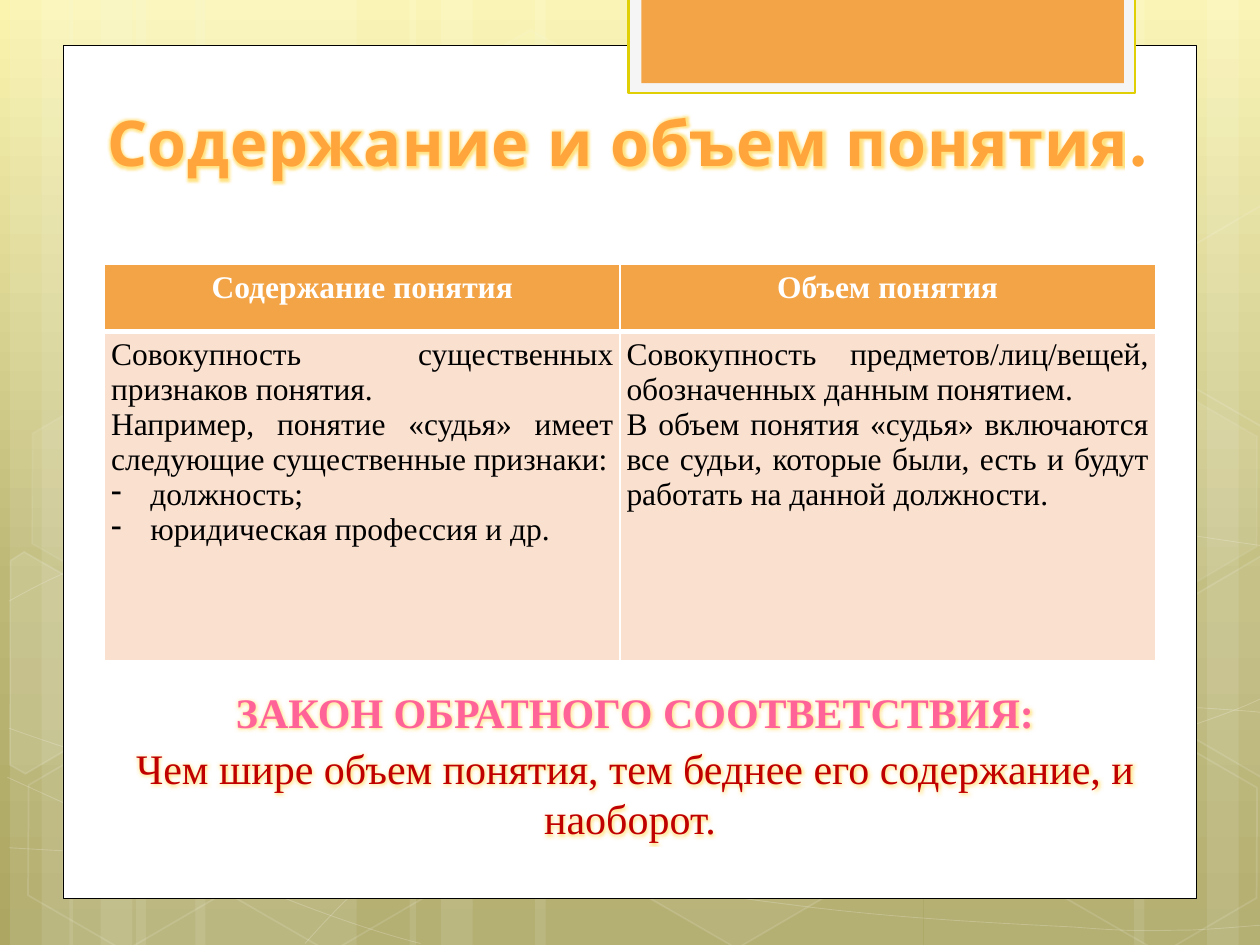
import copy
import math

import pptx
import pptx.dml.color
import pptx.enum.shapes
import pptx.enum.text
import pptx.oxml
import pptx.oxml.ns
import pptx.util

SHAPE = pptx.enum.shapes.MSO_SHAPE
ALIGN = pptx.enum.text.PP_ALIGN
ANCHOR = pptx.enum.text.MSO_ANCHOR
Pt = pptx.util.Pt
qn = pptx.oxml.ns.qn

SERIF = "Times New Roman"
WHITE, ORANGE, PEACH = "FFFFFF", "F3A447", "FAE0CF"
TILT = 30

# Light vertical bars: left, width
BARS = [(1.08, 1.75), (0.08, 0.5), (0.33, 0.83), (1.55, 1.75), (0.55, 0.5), (0.8, 0.83),
        (7.33, 1.75), (9.58, 0.5), (9, 0.83), (4.25, 3.08), (3.25, 0.5), (3.5, 0.83)]

# Thin curves: a start, then three Bezier points for each span
CURVES = [
    [(0.07, 6.73), (0.61, 6.76), (1.15, 6.79), (1.9, 6.78), (2.65, 6.77), (3.58, 6.75), (4.58, 6.65),
     (5.58, 6.55), (7, 6.36), (7.92, 6.17), (8.83, 5.98), (9.77, 5.68), (10.07, 5.51)],
    [(0.07, 4.77), (0.36, 4.61), (0.65, 4.46), (1.21, 4.31), (1.78, 4.16), (2.59, 3.94), (3.47, 3.87),
     (4.36, 3.8), (5.44, 3.79), (6.54, 3.87), (7.64, 3.95), (9.47, 4.26), (10.07, 4.34)],
    [(0.06, 6.17), (1.27, 6.72), (2.47, 7.27), (3.34, 7.49)],
    [(0.07, 5.78), (0.38, 5.89), (0.7, 6), (1.28, 6.16), (1.86, 6.31), (2.73, 6.56), (3.57, 6.73),
     (4.4, 6.9), (5.45, 7.08), (6.28, 7.18), (7.11, 7.29), (8, 7.33), (8.53, 7.36),
     (9.05, 7.4), (9.19, 7.38), (9.45, 7.38), (9.71, 7.37), (9.89, 7.35), (10.07, 7.34)],
    [(2.42, 7.49), (2.6, 7.29), (2.78, 7.09), (3.02, 6.91), (3.26, 6.73), (3.6, 6.53), (3.88, 6.39),
     (4.16, 6.25), (4.33, 6.19), (4.7, 6.09), (5.06, 5.99), (5.73, 5.85), (6.08, 5.78),
     (6.44, 5.71), (6.49, 5.71), (6.8, 5.69), (7.11, 5.66), (7.6, 5.63), (7.94, 5.62),
     (8.29, 5.61), (8.86, 5.62), (8.86, 5.62), (8.86, 5.62), (9.53, 5.62), (9.53, 5.62),
     (9.71, 5.63), (9.88, 5.64), (9.97, 5.65), (10.06, 5.66), (10.03, 5.65), (10.06, 5.66)],
]

# Hexagons: left, top, fill opacity (None for no fill), line opacity
HEXAGONS = [(3.34, 0.36, 4, 8), (4.97, 5.89, 6, 12), (0.11, 5.91, None, 12), (0.14, 3.12, 7, 8),
            (1.74, 5.92, None, 12), (7.53, 4.53, 10, 12), (8.34, 5.93, None, 12), (8.34, 3.14, 7, 8)]

# Hexagons cut by the slide edge: corners, turning centre, fill opacity
CUT_HEXAGONS = [
    ([(0.08, 4.45), (0.19, 4.38), (0.96, 4.82), (0.95, 5.7), (0.2, 6.14), (0.08, 6.07)],
     (0.36, 5.35), 10),
    ([(9.26, 4.85), (10.01, 4.41), (10.09, 4.46), (10.09, 6.13), (10.02, 6.17), (9.26, 5.73)],
     (9.85, 5.2), 4),
    ([(9.26, 2.07), (10.01, 1.63), (10.1, 1.68), (10.09, 3.35), (10.02, 3.39), (9.26, 2.95)],
     (9.85, 2.41), None),
]

HEADINGS = ["Содержание понятия", "Объем понятия"]
# Each paragraph: text, whether it is a dashed item
DEFINITIONS = [
    [("Совокупность существенных признаков понятия.", False),
     ("Например, понятие «судья» имеет следующие существенные признаки:", False),
     ("должность;", True),
     ("юридическая профессия и др. ", True)],
    [("Совокупность предметов/лиц/вещей, обозначенных данным понятием. ", False),
     ("В объем понятия «судья» включаются все судьи, которые были, есть и будут "
      "работать на данной должности. ", False)],
]


def length(inches):
    return pptx.util.Cm(round(inches * 2.54, 2))


def color(value):
    return pptx.dml.color.RGBColor.from_string(value)


def add_xml(parent, tag, **attributes):
    child = pptx.oxml.parse_xml(f'<a:{tag} {pptx.oxml.ns.nsdecls("a")}/>')
    for key, value in attributes.items():
        child.set(key, str(value))
    parent.append(child)
    return child


def paint(shape, fill=None, line=None, width=1, fill_alpha=100, line_alpha=100):
    shape.shadow.inherit = False
    for part, value, alpha, tag in ((shape.fill, fill, fill_alpha, "a:solidFill"),
                                    (shape.line.fill, line, line_alpha, "a:ln/a:solidFill")):
        if value is None:
            part.background()
            continue
        part.solid()
        part.fore_color.rgb = color(value)
        if alpha < 100:
            steps = "/".join(qn(step) for step in f"{tag}/a:srgbClr".split("/"))
            add_xml(shape.element.spPr.find(steps), "alpha", val=alpha * 1000)
    if line:
        shape.line.width = Pt(width)


def add_block(slide, kind, box, **look):
    block = slide.shapes.add_shape(kind, *map(length, box))
    paint(block, **look)
    return block


def add_outline(slide, box, points, closed, **look):
    corners = [(length(box[0] + x), length(box[1] + y)) for x, y in points]
    builder = slide.shapes.build_freeform(*corners[0], scale=1.0)
    builder.add_line_segments(corners[1:], close=closed)
    outline = builder.convert_to_shape()
    paint(outline, **look)
    return outline


def bend(outline):
    """Turn every three straight segments into one Bezier span."""
    segments = list(outline.element.iter(qn("a:lnTo")))
    for i in range(0, len(segments), 3):
        span = add_xml(segments[i].getparent(), "cubicBezTo")
        for segment in segments[i:i + 3]:
            span.append(segment[0])
            segment.getparent().remove(segment)


def untilt(point, centre):
    angle = math.radians(-TILT)
    x, y = point[0] - centre[0], point[1] - centre[1]
    return (centre[0] + x * math.cos(angle) - y * math.sin(angle),
            centre[1] + x * math.sin(angle) + y * math.cos(angle))


def write(paragraph, text, hue, glow=False, **formats):
    run = paragraph.add_run()
    run.text = text
    run.font.fill.solid()
    run.font.fill.fore_color.rgb = color(hue)
    properties = run._r.get_or_add_rPr()
    if glow:
        halo = add_xml(add_xml(properties, "effectLst"), "glow", rad=Pt(5))
        add_xml(add_xml(halo, "srgbClr", val="FFD23C"), "alpha", val=65000)
    for key, value in formats.items():
        setattr(run.font, key, value)
    return properties


def add_text_frame(slide, box, anchor):
    frame = slide.shapes.add_textbox(*map(length, box)).text_frame
    frame.word_wrap = True
    frame.vertical_anchor = anchor
    return frame


def add_backdrop(slide, box):
    left, top, _, height = box
    # Green gradient
    fill = slide.background.fill
    fill.gradient()
    fill.gradient_angle = 270
    stops = slide.element.find(".//" + qn("a:gsLst"))
    stops.insert(1, copy.deepcopy(stops[0]))
    for stop, (position, hue) in zip(fill.gradient_stops,
                                     [(0, "FAF4AF"), (0.62, "BDB876"), (1, "ACA662")]):
        stop.position = position
        stop.color.rgb = color(hue)
    # Bars, curves and hexagons
    for x, width in BARS:
        add_block(slide, SHAPE.RECTANGLE, (left + x, top, width, height), fill=WHITE, fill_alpha=10)
    for nodes in CURVES:
        bend(add_outline(slide, box, nodes, False, line=WHITE, width=0.5, line_alpha=20))
    for x, y, opacity, line_alpha in HEXAGONS:
        hexagon = add_block(slide, SHAPE.HEXAGON, (left + x, top + y, 1.75, 1.52),
                            fill=WHITE if opacity else None, fill_alpha=opacity,
                            line=WHITE, line_alpha=line_alpha)
        hexagon.adjustments[0] = 0.285
        hexagon.rotation = TILT
    for corners, centre, opacity in CUT_HEXAGONS:
        upright = [untilt(corner, centre) for corner in corners]
        add_outline(slide, box, upright, True, fill=WHITE if opacity else None,
                    fill_alpha=opacity, line=WHITE, line_alpha=12).rotation = TILT


def add_sheet(slide, box):
    left, top = box[:2]
    add_block(slide, SHAPE.RECTANGLE, box, fill=WHITE, line="000000", width=0.5)
    # Orange tab at the top edge
    add_block(slide, SHAPE.RECTANGLE, (left + 4.49, top - 0.38, 4.02, 0.76),
              fill="F5F5F5", line="DFCF04", width=1.25)
    add_block(slide, SHAPE.RECTANGLE, (left + 4.59, top - 0.38, 3.83, 0.68), fill=ORANGE)


def add_title(slide, box):
    frame = add_text_frame(slide, box, ANCHOR.BOTTOM)
    properties = write(frame.paragraphs[0], "Содержание и объем понятия.", "FFA53B", glow=True,
                       name="League Spartan", size=Pt(36), bold=True)
    properties.set("spc", "50")


def style_cell(cell, hue, bottom_width):
    for side in ("left", "right", "top", "bottom"):
        setattr(cell, f"margin_{side}", length(0.05))
    properties = cell._tc.get_or_add_tcPr()
    for tag, width in (("lnL", 1), ("lnR", 1), ("lnT", 1), ("lnB", bottom_width)):
        border = add_xml(properties, tag, w=Pt(width))
        add_xml(add_xml(border, "solidFill"), "srgbClr", val=WHITE)
    cell.fill.solid()
    cell.fill.fore_color.rgb = color(hue)


def add_comparison(slide, box):
    table = slide.shapes.add_table(2, 2, *map(length, box)).table
    for column, width in zip(table.columns, (4.09, box[2] - 4.09)):
        column.width = length(width)
    for row, height in zip(table.rows, (0.53, box[3] - 0.53)):
        row.height = length(height)
    for i, (heading, definition) in enumerate(zip(HEADINGS, DEFINITIONS)):
        # Heading
        head = table.cell(0, i)
        style_cell(head, ORANGE, 3)
        paragraph = head.text_frame.paragraphs[0]
        paragraph.alignment = ALIGN.CENTER
        write(paragraph, heading, WHITE, name=SERIF, size=Pt(18), bold=True)
        # Definition
        body = table.cell(1, i)
        style_cell(body, PEACH, 1)
        for n, (text, dashed) in enumerate(definition):
            paragraph = body.text_frame.add_paragraph() if n else body.text_frame.paragraphs[0]
            paragraph.alignment = ALIGN.JUSTIFY
            if dashed:
                layout = paragraph._p.get_or_add_pPr()
                layout.set("marL", str(length(0.31)))
                layout.set("indent", str(-length(0.31)))
                add_xml(layout, "buChar", char="-")
            write(paragraph, text, "000000", name=SERIF, size=Pt(18), bold=False)


def add_law(slide, box):
    frame = add_text_frame(slide, box, ANCHOR.TOP)
    lines = [("ЗАКОН ОБРАТНОГО СООТВЕТСТВИЯ:", "FF6398", True),
             ("Чем шире объем понятия, тем беднее его содержание, и наоборот. ", "C00000", False)]
    for n, (text, hue, bold) in enumerate(lines):
        paragraph = frame.add_paragraph() if n else frame.paragraphs[0]
        for key, value in dict(alignment=ALIGN.CENTER, space_before=Pt(3)).items():
            setattr(paragraph, key, value)
        paragraph._p.get_or_add_pPr().set("marL", str(length(0.07)))
        write(paragraph, text, hue, glow=True, name=SERIF, size=Pt(24), bold=bold)


def main():
    deck = pptx.Presentation()
    deck.slide_width, deck.slide_height = length(10), length(7.5)
    slide = deck.slides.add_slide(deck.slide_layouts[6])
    add_backdrop(slide, (0, 0, 10, 7.5))
    add_sheet(slide, (0.5, 0.36, 9, 6.77))
    add_title(slide, (0.75, 0.68, 8.58, 0.79))
    add_comparison(slide, (0.83, 2.1, 8.34, 3.14))
    add_law(slide, (0.83, 5.4, 8.35, 1.42))
    deck.save("out.pptx")


if __name__ == "__main__":
    main()
